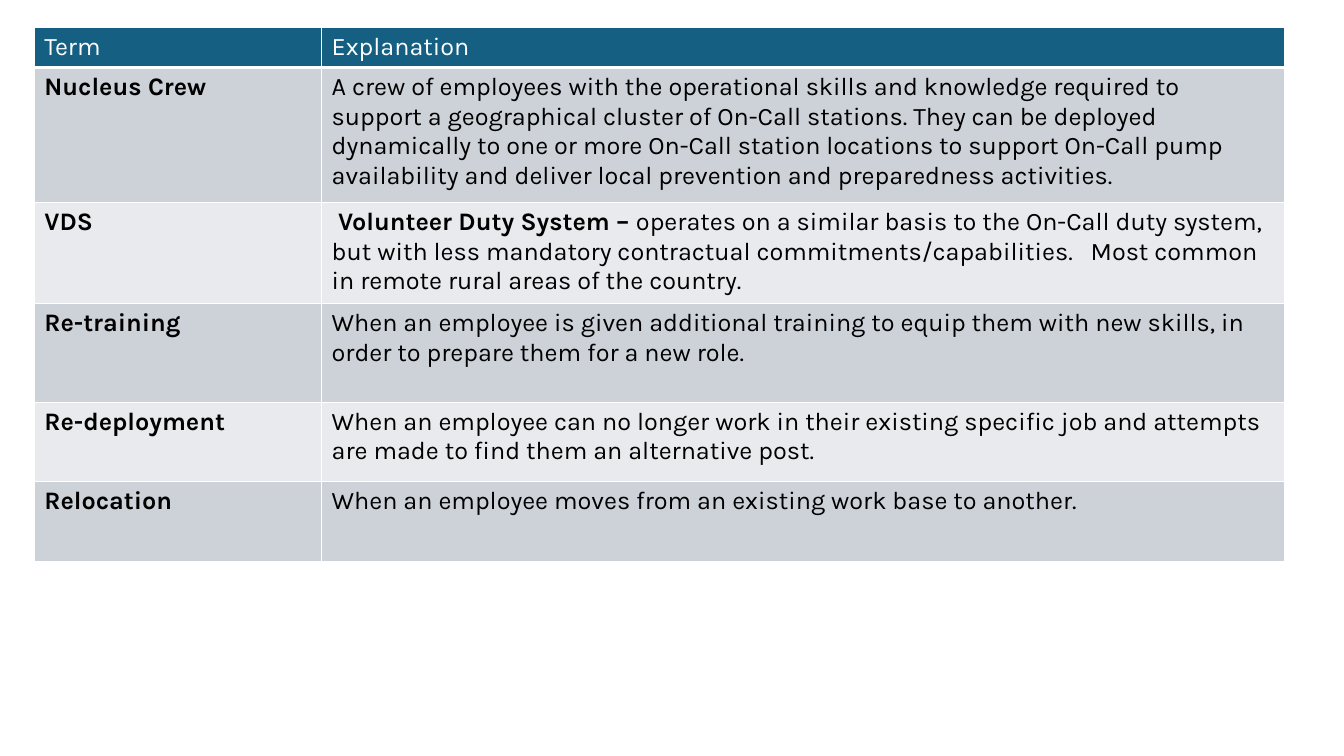
from dataclasses import dataclass

from lxml import etree
from pptx import Presentation
from pptx.dml.color import RGBColor
from pptx.oxml.ns import qn
from pptx.util import Inches, Pt

WIDTH, HEIGHT = Inches(13.33), Inches(7.5)
FONT, SIZE = "Karla", 18
COLORS = {
    "head": "156082",
    "dark": "CCD2D8",
    "light": "E8EAED",
    "white": "FFFFFF",
    "black": "000000",
}
# Shares of the slide's size, in percent
LEFT, TOP = 2.55, 3.6
COLS = (21.38, 71.64)


@dataclass
class Entry:
    term: str
    text: str
    share: float
    lead: str = ""


ENTRIES = [
    Entry("Term", "Explanation", 5.33),
    Entry(
        "Nucleus Crew",
        "A crew of employees with the operational skills and knowledge required to "
        "support a geographical cluster of On-Call stations. They can be deployed "
        "dynamically to one or more On-Call station locations to support On-Call pump "
        "availability and deliver local prevention and preparedness activities.",
        17.87,
    ),
    Entry(
        "VDS",
        "operates on a similar basis to the On-Call duty system, but with less "
        "mandatory contractual commitments/capabilities.   Most common in remote "
        "rural areas of the country.",
        13.33,
        lead=" Volunteer Duty System – ",
    ),
    Entry(
        "Re-training",
        "When an employee is given additional training to equip them with new skills, "
        "in order to prepare them for a new role.",
        13.07,
    ),
    Entry(
        "Re-deployment",
        "When an employee can no longer work in their existing specific job and "
        "attempts are made to find them an alternative post.",
        10.53,
    ),
    Entry(
        "Relocation",
        "When an employee moves from an existing work base to another.",
        10.53,
    ),
]


def across(share: float) -> int:
    return round(WIDTH * share / 100)


def down(share: float) -> int:
    return round(HEIGHT * share / 100)


def write(cell, text: str, *, color: str = "black", bold: bool = False) -> None:
    """Add one formatted run to the cell's paragraph."""
    run = cell.text_frame.paragraphs[0].add_run()
    run.text = text
    font = run.font
    font.name, font.size, font.bold = FONT, Pt(SIZE), bold
    font.color.rgb = RGBColor.from_string(COLORS[color])


def border(cell, base: float) -> None:
    """Draw white edges, with the bottom one `base` points wide."""
    props = cell._tc.get_or_add_tcPr()
    edges = {"lnL": 1, "lnR": 1, "lnT": 1, "lnB": base}
    for spot, (name, width) in enumerate(edges.items()):
        line = etree.Element(qn(f"a:{name}"), w=str(Pt(width)))
        fill = etree.SubElement(line, qn("a:solidFill"))
        etree.SubElement(fill, qn("a:srgbClr"), val=COLORS["white"])
        props.insert(spot, line)


def paint(cell, fill: str, base: float) -> None:
    cell.fill.solid()
    cell.fill.fore_color.rgb = RGBColor.from_string(COLORS[fill])
    border(cell, base)


def build(slide) -> None:
    high = sum(entry.share for entry in ENTRIES)
    table = slide.shapes.add_table(
        len(ENTRIES), len(COLS),
        across(LEFT), down(TOP), across(sum(COLS)), down(high),
    ).table
    table.horz_banding = False
    for column, share in zip(table.columns, COLS):
        column.width = across(share)

    for index, (row, entry) in enumerate(zip(table.rows, ENTRIES)):
        row.height = down(entry.share)
        head = index == 0
        fill = "head" if head else ("light", "dark")[index % 2]
        color = "white" if head else "black"
        term, text = row.cells
        for cell in (term, text):
            paint(cell, fill, 3 if head else 1)
        write(term, entry.term, color=color, bold=not head)
        if entry.lead:
            write(text, entry.lead, bold=True)
        write(text, entry.text, color=color)


def main() -> None:
    deck = Presentation()
    deck.slide_width, deck.slide_height = WIDTH, HEIGHT
    build(deck.slides.add_slide(deck.slide_layouts[6]))
    deck.save("out.pptx")


if __name__ == "__main__":
    main()
